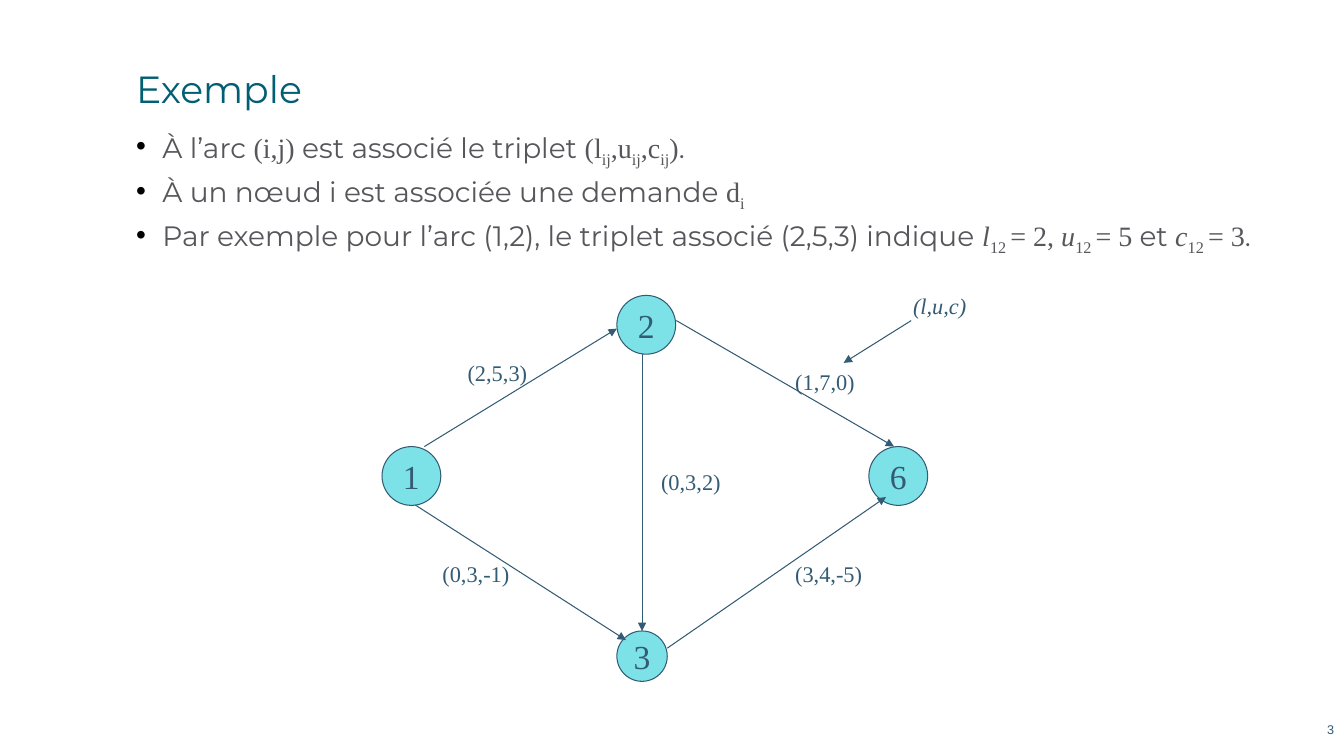
from lxml import etree
from pptx import Presentation
from pptx.dml.color import RGBColor
from pptx.enum.shapes import MSO_CONNECTOR, MSO_SHAPE
from pptx.enum.text import MSO_ANCHOR, MSO_AUTO_SIZE, PP_ALIGN
from pptx.oxml.ns import qn
from pptx.util import Pt

ELLIPSE = MSO_SHAPE.OVAL
STRAIGHT = MSO_CONNECTOR.STRAIGHT
TOP, MIDDLE = MSO_ANCHOR.TOP, MSO_ANCHOR.MIDDLE
LEFT, CENTER, RIGHT = PP_ALIGN.LEFT, PP_ALIGN.CENTER, PP_ALIGN.RIGHT
NO_FIT = MSO_AUTO_SIZE.NONE
SANS, SERIF = "Montserrat", "Times New Roman"
COLORS = {"title": "025E73", "body": "57565B", "bullet": "000000",
          "ink": "335B74", "node": "7DE2E7"}


def color(name):
    return RGBColor.from_string(COLORS[name])


def style(para, size, face, name, align=LEFT):
    para.alignment = align
    para.font.size = Pt(size)
    para.font.name = face
    para.font.color.rgb = color(name)


deck = Presentation()
deck.slide_width, deck.slide_height = Pt(960), Pt(540)
page = deck.slides.add_slide(deck.slide_layouts[1])
title, body = page.shapes.title, page.placeholders[1]

for box, top, height in ((title, 46.8, 54), (body, 86.4, 123.84)):
    box.left, box.top, box.width, box.height = Pt(90), Pt(top), Pt(828), Pt(height)
    box.text_frame.auto_size = NO_FIT
    box.text_frame.word_wrap = True
    box.text_frame.vertical_anchor = TOP

title.text_frame.text = "Exemple"
heading = title.text_frame.paragraphs[0]
heading.line_spacing = 0.9
style(heading, 27, SANS, "title")

bullets = [
    [("À l’arc ", "sans"), ("(i,j)", "serif"), (" est associé le triplet ", "sans"),
     ("(l", "serif"), ("ij", "sub"), (",u", "serif"), ("ij", "sub"),
     (",c", "serif"), ("ij", "sub"), (")", "serif"), (".", "sans")],
    [("À un nœud i est associée une demande ", "sans"), ("d", "serif"), ("i", "sub")],
    [("Par exemple pour l’arc (1,2), le triplet associé (2,5,3) indique ", "sans"),
     ("l", "italic"), ("12 ", "sub"), ("= 2, ", "serif"),
     ("u", "italic"), ("12 ", "sub"), ("= 5 ", "serif"), ("et ", "sans"),
     ("c", "italic"), ("12 ", "sub"), ("= 3", "serif"), (".", "sans")],
]
frame = body.text_frame
frame.margin_top = frame.margin_bottom = Pt(7.2)
for index, spans in enumerate(bullets):
    para = frame.add_paragraph() if index else frame.paragraphs[0]
    para.line_spacing = 0.9
    para.space_before = Pt(7 if index else 0)
    props = para._p.get_or_add_pPr()
    props.set("marL", str(Pt(18.75)))
    props.set("indent", str(-Pt(18.75)))
    tint = etree.SubElement(props, qn("a:buClr"))
    etree.SubElement(tint, qn("a:srgbClr"), val=COLORS["bullet"])
    etree.SubElement(props, qn("a:buFont"), typeface="Arial")
    etree.SubElement(props, qn("a:buChar"), char="•")
    style(para, 20, SANS, "body")
    for text, kind in spans:
        span = para.add_run()
        span.text = text
        if kind != "sans":
            span.font.name = SERIF
        if kind == "italic":
            span.font.italic = True
        if kind == "sub":
            span._r.get_or_add_rPr().set("baseline", "-25000")

nodes = {}
for number, left, top, size in (("1", 272.9, 319, 42), ("2", 440.64, 211, 42),
                                ("3", 440.64, 450.72, 36), ("6", 620.64, 319, 42)):
    node = page.shapes.add_shape(ELLIPSE, Pt(left), Pt(top), Pt(size), Pt(size))
    node.shadow.inherit = False
    node.fill.solid()
    node.fill.fore_color.rgb = color("node")
    node.line.color.rgb = color("ink")
    node.line.width = Pt(0.75)
    frame = node.text_frame
    frame.margin_left = frame.margin_right = frame.margin_top = frame.margin_bottom = 0
    frame.vertical_anchor = MIDDLE
    frame.text = number
    style(frame.paragraphs[0], 24, SERIF, "ink", CENTER)
    nodes[number] = node

arrows = [
    (303.12, 319, 440.64, 234.72, None),
    (483.12, 229, 638.64, 319, None),
    (458.64, 252.72, 458.64, 450.72, "3"),
    (296.64, 360.72, 447.12, 457.2, None),
    (476.64, 463, 632.88, 355, None),
    (650.88, 229, 602.64, 259.2, None),
]
for *ends, target in arrows:
    arrow = page.shapes.add_connector(STRAIGHT, *map(Pt, ends))
    if target:
        arrow.end_connect(nodes[target], 0)
    arrow.line.color.rgb = color("ink")
    arrow.line.width = Pt(0.75)
    etree.SubElement(arrow.line._get_or_add_ln(), qn("a:tailEnd"), type="triangle")
    etree.SubElement(arrow._element.spPr, qn("a:effectLst"))

labels = [
    ("(2,5,3)", 326.88, 252.72, 60),
    ("(1,7,0)", 560.88, 259.2, 60),
    ("(0,3,2)", 465.12, 331.2, 84),
    ("(0,3,-1)", 308.88, 396.72, 84),
    ("(3,4,-5)", 560.88, 396.72, 72),
    ("(l,u,c)", 645.12, 205.2, 60),
]
for text, left, top, width in labels:
    box = page.shapes.add_textbox(Pt(left), Pt(top), Pt(width), Pt(26.64))
    box.text_frame.word_wrap = True
    box.text_frame.text = text
    para = box.text_frame.paragraphs[0]
    style(para, 16, SERIF, "ink")
    para.font.italic = text == "(l,u,c)"

box = page.shapes.add_textbox(Pt(940), Pt(513.36), Pt(20), Pt(15.84))
box.text_frame.vertical_anchor = MIDDLE
box.text_frame.word_wrap = True
box.text_frame.text = "3"
style(box.text_frame.paragraphs[0], 9, "Arial", "ink", RIGHT)

deck.save("out.pptx")
